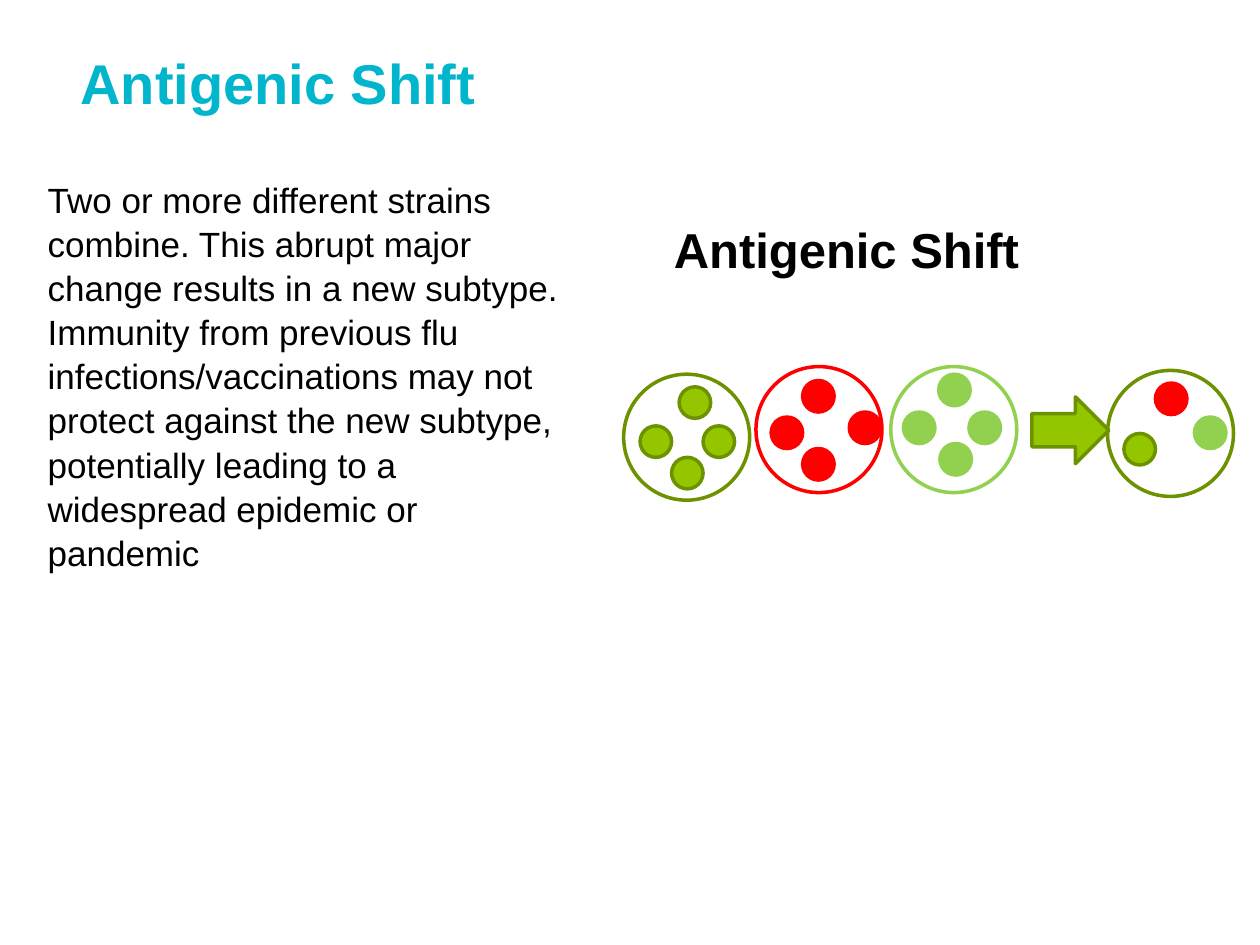
from dataclasses import dataclass

from pptx import Presentation
from pptx import util as u
from pptx.dml.color import RGBColor
from pptx.enum import shapes, text


@dataclass(frozen=True)
class Theme:
    """Hold the colours, font and type sizes of the slide."""
    font: str = "Arial"
    title: str = "00B5CC"
    ink: str = "000000"
    lime: tuple = ("94C600", "6D9200")
    red: tuple = ("FF0000", "FF0000")
    green: tuple = ("92D050", "92D050")
    title_size: int = 32
    heading_size: int = 28
    body_size: int = 20
    line: int = 2


THEME = Theme()
CELL = 1
DOT = 0.25


def add_text(page, box, words, size, colour, bold=False, middle=False, spacing=1.05):
    """Place one wrapped paragraph in the given box."""
    frame = page.shapes.add_textbox(*map(u.Inches, box)).text_frame
    frame.word_wrap = True
    frame.vertical_anchor = text.MSO_ANCHOR.MIDDLE if middle else text.MSO_ANCHOR.TOP
    para = frame.paragraphs[0]
    para.line_spacing = spacing
    span = para.add_run()
    span.text = words
    span.font.name = THEME.font
    span.font.size = u.Pt(size)
    span.font.bold = bold
    span.font.color.rgb = RGBColor.from_string(colour)


def add_outline(parent, kind, box, line, fill=None):
    """Place a preset shape with a line and an optional fill."""
    shape = parent.shapes.add_shape(kind, *map(u.Inches, box))
    shape.shadow.inherit = False
    shape.line.color.rgb = RGBColor.from_string(line)
    shape.line.width = u.Pt(THEME.line)
    if fill:
        shape.fill.solid()
        shape.fill.fore_color.rgb = RGBColor.from_string(fill)
    else:
        shape.fill.background()


def add_virus(page, box, rim, genes):
    """Place a round virus whose genes sit at shares of its box."""
    left, top, width, height = box
    virus = page.shapes.add_group_shape()
    add_outline(virus, shapes.MSO_SHAPE.OVAL, box, rim)
    for across, down, (fill, line) in genes:
        dot = (left + across * width, top + down * height, DOT * width, DOT * height)
        add_outline(virus, shapes.MSO_SHAPE.FLOWCHART_CONNECTOR, dot, line, fill)


def add_shift_diagram(page, box):
    """Place the three parent strains, the arrow and the new subtype."""
    left, top, width, height = box
    strains = [
        (0, 0.06, THEME.lime, [(0.13, 0.41), (0.38, 0.66), (0.63, 0.41), (0.44, 0.1)]),
        (1.05, 0, THEME.red, [(0.12, 0.4), (0.37, 0.65), (0.74, 0.36), (0.37, 0.11)]),
        (2.12, 0, THEME.green, [(0.1, 0.36), (0.39, 0.61), (0.62, 0.36), (0.38, 0.06)]),
    ]
    for across, down, colours, spots in strains:
        genes = [(*spot, colours) for spot in spots]
        add_virus(page, (left + across, top + down, CELL, CELL), colours[1], genes)
    fill, line = THEME.lime
    arrow = (left + 3.24, top + 0.24, 0.61, 0.53)
    add_outline(page, shapes.MSO_SHAPE.RIGHT_ARROW, arrow, line, fill)
    mixed = [(0.38, 0.1, THEME.red), (0.13, 0.5, THEME.lime), (0.69, 0.37, THEME.green)]
    add_virus(page, (left + width - CELL, top + 0.03, CELL, CELL), line, mixed)


def main():
    """Build and save the slide."""
    deck = Presentation()
    deck.slide_width, deck.slide_height = u.Inches(10), u.Inches(7.5)
    page = deck.slides.add_slide(deck.slide_layouts[6])
    add_text(page, (0.54, 0.03, 8.83, 1.25), "Antigenic Shift",
             THEME.title_size, THEME.title, bold=True, middle=True, spacing=1.0)
    add_text(page, (0.28, 1.35, 4.33, 4.42),
             "Two or more different strains combine. This abrupt major change results "
             "in a new subtype. Immunity from previous flu infections/vaccinations may "
             "not protect against the new subtype, potentially leading to a widespread "
             "epidemic or pandemic", THEME.body_size, THEME.ink)
    add_text(page, (5.25, 1.67, 4.33, 4.42), "Antigenic Shift",
             THEME.heading_size, THEME.ink, bold=True)
    add_shift_diagram(page, (4.95, 2.91, 4.84, 1.06))
    deck.save("out.pptx")


if __name__ == "__main__":
    main()
